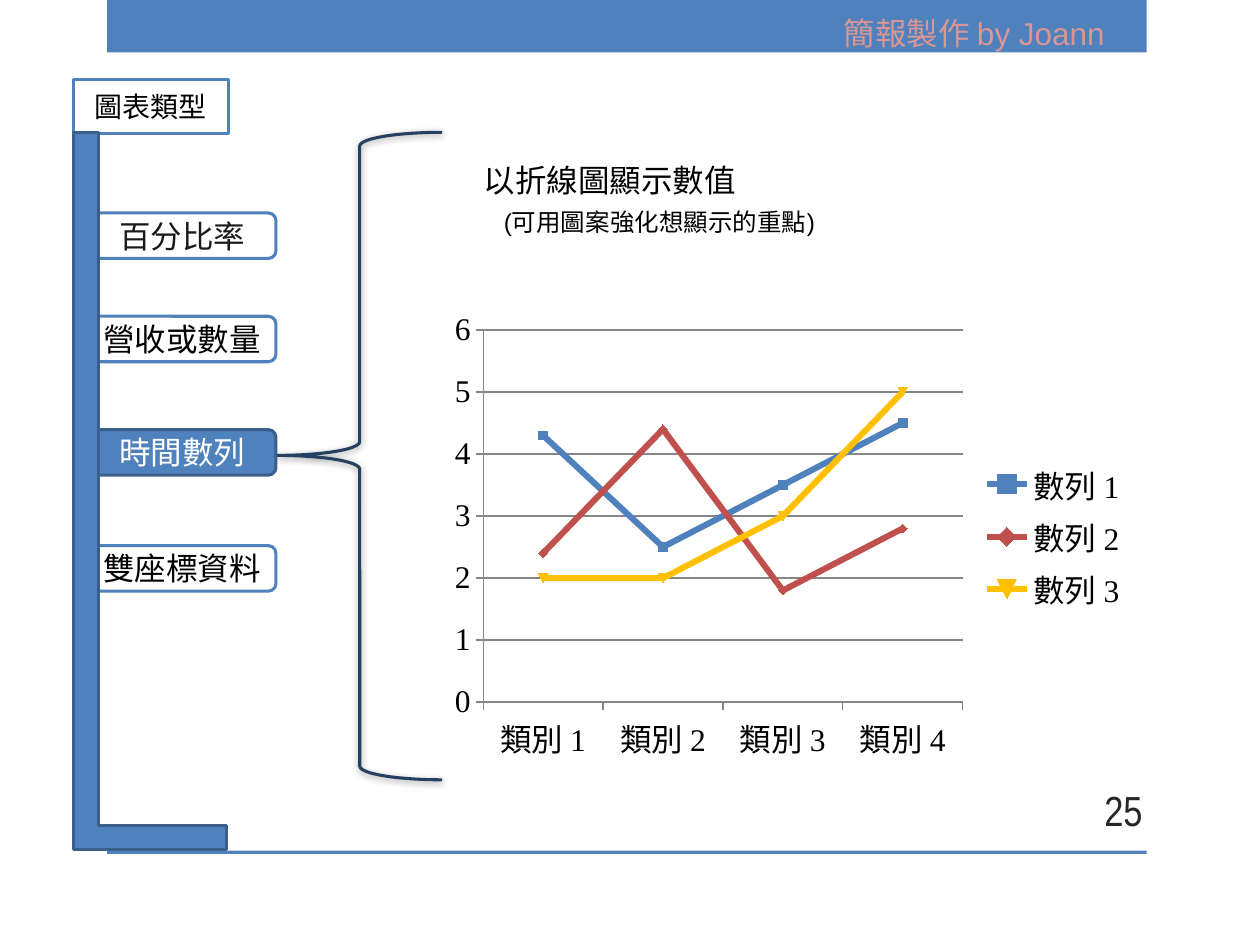
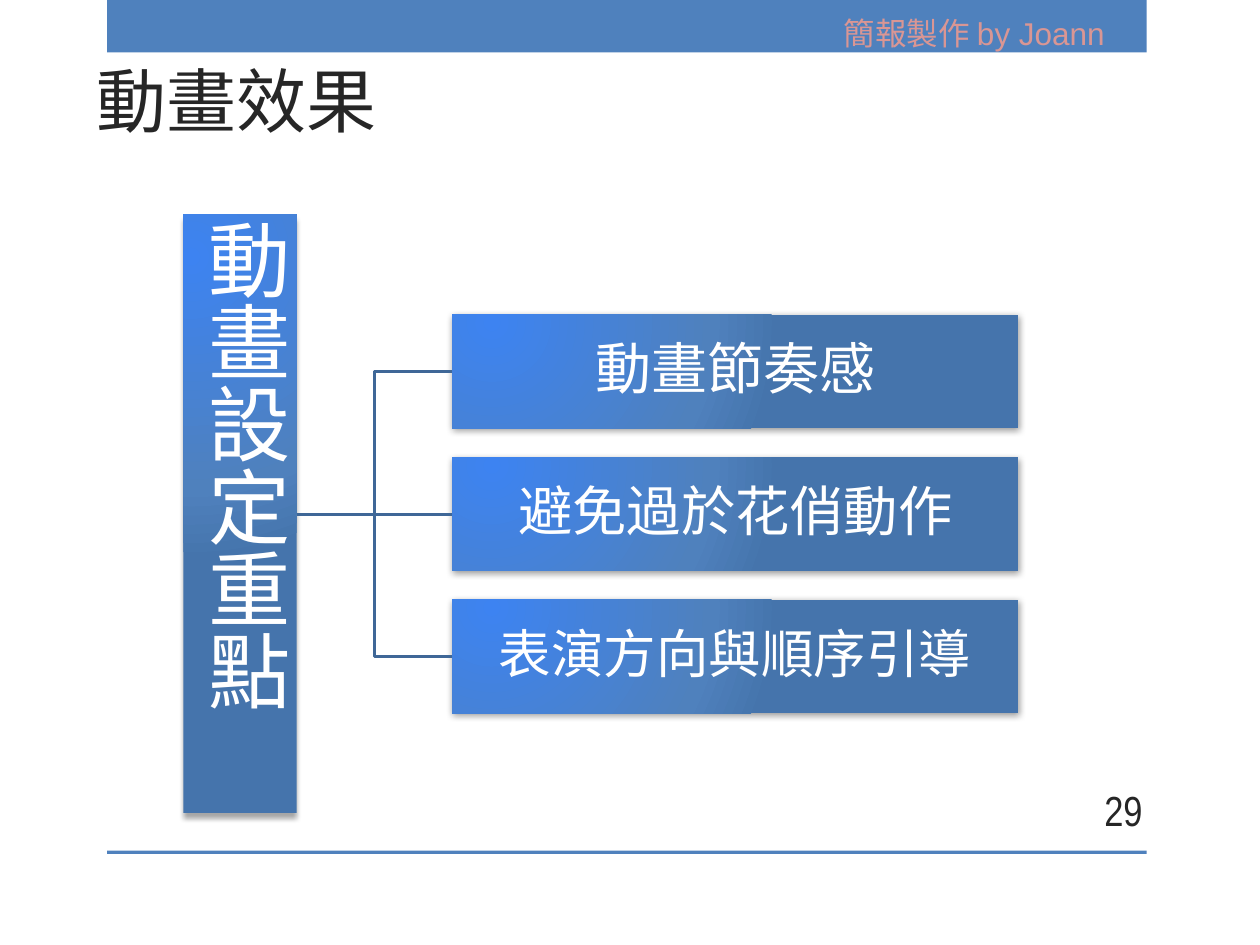
from lxml import etree
from pptx import Presentation
from pptx.chart.data import CategoryChartData
from pptx.dml.color import RGBColor
from pptx.enum.chart import XL_CHART_TYPE, XL_LEGEND_POSITION, XL_TICK_MARK
from pptx.enum.shapes import MSO_CONNECTOR, MSO_SHAPE
from pptx.enum.text import MSO_ANCHOR, MSO_AUTO_SIZE, PP_ALIGN
from pptx.oxml.ns import qn
from pptx.util import Pt

# Content
HEADER = "簡報製作 by Joann"

MENU_TITLE = "圖表類型"
CHART_TYPES = [  # label, top, text colour
    ("百分比率", 121.7, "ink"),
    ("營收或數量", 180.7, "black"),
    ("時間數列", 245.5, "white"),
    ("雙座標資料", 311.8, "black"),
]
SELECTED = "時間數列"
HEADLINE = "以折線圖顯示數值"
HINT = "(可用圖案強化想顯示的重點)"
CATEGORIES = ["類別 1", "類別 2", "類別 3", "類別 4"]
SERIES = [
    ("數列 1", (4.3, 2.5, 3.5, 4.5), "blue"),
    ("數列 2", (2.4, 4.4, 1.8, 2.8), "red"),
    ("數列 3", (2, 2, 3, 5), "yellow"),
]

ANIMATION_TITLE = "動畫效果"
ROOT = "動畫設定重點"
POINTS = [("動畫節奏感", 32), ("避免過於花俏動作", 31), ("表演方向與順序引導", 30)]

# Shared look
COLORS = {
    "blue": "4F81BD", "red": "C0504D", "yellow": "FFC000", "pink": "D99694",
    "white": "FFFFFF", "black": "000000", "ink": "1A1A1A", "title": "262626",
    "edge": "3A5F8C", "brace": "254061", "branch": "3F6797", "axis": "868686",
    "glow": "3D83F1", "deep": "4574AC",
}
SANS, NARROW, SERIF = "Arial", "Arial Narrow", "Times New Roman"
LINE = 1.75
SOFT_SHADOW = (40, 4, 1, 88)  # opacity %, blur, distance, angle
ROOT_SHADOW = (35, 3, 3, 90)


def rgb(key):
    return RGBColor.from_string(COLORS[key])


def points(*lengths):
    return [Pt(length) for length in lengths]


def place(part, box):
    part.left, part.top, part.width, part.height = points(*box)


def paint(part, fill=None, line=None):
    if fill:
        part.fill.solid()
        part.fill.fore_color.rgb = rgb(fill)
    else:
        part.fill.background()
    if line:
        part.line.color.rgb = rgb(line)
        part.line.width = Pt(LINE)
    else:
        part.line.fill.background()


def write(part, text, size, font, color, align=PP_ALIGN.LEFT,
          anchor=MSO_ANCHOR.TOP, margin=None, spacing=None):
    frame = part.text_frame
    frame.text = text
    frame.word_wrap = True
    frame.auto_size = MSO_AUTO_SIZE.NONE
    frame.vertical_anchor = anchor
    if margin is not None:
        frame.margin_left = frame.margin_right = Pt(margin)
        frame.margin_top = frame.margin_bottom = Pt(margin)
    paragraph = frame.paragraphs[0]
    paragraph.alignment = align
    if spacing:
        paragraph.line_spacing = spacing
    paragraph.font.size = Pt(size)
    paragraph.font.name = font
    paragraph.font.color.rgb = rgb(color)


def add_part(slide, kind, box, fill=None, line=None):
    part = slide.shapes.add_shape(kind, *points(*box))
    part.shadow.inherit = False
    paint(part, fill, line)
    return part


def add_label(slide, box, *text, **style):
    label = slide.shapes.add_textbox(*points(*box))
    write(label, *text, **style)
    return label


def cast_shadow(part, opacity, blur, distance, angle):
    effects = part.element.spPr.find(qn("a:effectLst"))
    shadow = etree.SubElement(
        effects, qn("a:outerShdw"), blurRad=str(Pt(blur)), dist=str(Pt(distance)),
        dir=str(angle * 60000), rotWithShape="0")
    color = etree.SubElement(shadow, qn("a:srgbClr"), val=COLORS["black"])
    etree.SubElement(color, qn("a:alpha"), val=str(opacity * 1000))


def glow_fill(part):
    """Replace the solid fill with a circular gradient from the top left."""
    gradient = etree.Element(qn("a:gradFill"), rotWithShape="1")
    stops = etree.SubElement(gradient, qn("a:gsLst"))
    for position, key in ((0, "glow"), (76, "blue"), (100, "deep")):
        stop = etree.SubElement(stops, qn("a:gs"), pos=str(position * 1000))
        etree.SubElement(stop, qn("a:srgbClr"), val=COLORS[key])
    circle = etree.SubElement(gradient, qn("a:path"))
    circle.set("path", "circle")
    etree.SubElement(circle, qn("a:fillToRect"), l="15000", t="15000", r="100000", b="100000")
    properties = part.element.spPr
    properties.replace(properties.find(qn("a:solidFill")), gradient)


def make_corner(part, foot, stem):
    """Turn a rectangle into the preset L shape, which MSO_SHAPE lacks."""
    geometry = part.element.spPr.find(qn("a:prstGeom"))
    geometry.set("prst", "corner")
    guides = geometry.find(qn("a:avLst"))
    for name, value in (("adj1", foot), ("adj2", stem)):
        etree.SubElement(guides, qn("a:gd"), name=name, fmla=f"val {value}")


def add_glow_box(slide, box, text, size, shadow, margin):
    part = add_part(slide, MSO_SHAPE.RECTANGLE, box, "blue")
    glow_fill(part)
    cast_shadow(part, *shadow)
    write(part, text, size, SERIF, "white", PP_ALIGN.CENTER, MSO_ANCHOR.MIDDLE,
          margin=margin, spacing=0.9)
    return part


def add_frame_to_master(prs, slide):
    """Build band, rule and header once and move them to the master."""
    frame = [
        add_part(slide, MSO_SHAPE.RECTANGLE, (61.2, 0, 594, 30), "blue"),
        add_part(slide, MSO_SHAPE.RECTANGLE, (61.2, 486, 594, 2), "blue"),
        add_label(slide, (475.2, 4.3, 180, 29), HEADER, 18, SANS, "pink"),
    ]
    tree = prs.slide_master.element.cSld.spTree
    for part in frame:
        tree.insert_element_before(part.element, "p:extLst")


def add_page_number(slide, number):
    add_label(slide, (600, 448, 60, 29), str(number), 24, NARROW, "title",
              align=PP_ALIGN.RIGHT, anchor=MSO_ANCHOR.MIDDLE)


def add_line_chart(slide):
    data = CategoryChartData()
    data.categories = CATEGORIES
    for name, values, _ in SERIES:
        data.add_series(name, values)
    chart = slide.shapes.add_chart(
        XL_CHART_TYPE.LINE_MARKERS, *points(252, 173.5, 399.6, 266.4), data).chart
    chart.has_title = False
    chart.font.size = Pt(18)
    chart.font.name = SERIF
    chart.font.color.rgb = rgb("black")
    chart.has_legend = True
    chart.legend.position = XL_LEGEND_POSITION.RIGHT
    chart.legend.include_in_layout = False

    chart.value_axis.has_major_gridlines = True
    for lines in (chart.category_axis, chart.value_axis, chart.value_axis.major_gridlines):
        lines.format.line.color.rgb = rgb("axis")
        lines.format.line.width = Pt(0.75)
    for axis in (chart.category_axis, chart.value_axis):
        axis.major_tick_mark = XL_TICK_MARK.OUTSIDE
        axis.minor_tick_mark = XL_TICK_MARK.NONE

    chart.plots[0].vary_by_categories = False
    for series, (_, _, color) in zip(chart.plots[0].series, SERIES):
        series.smooth = False
        series.format.line.color.rgb = rgb(color)
        series.format.line.width = Pt(3.5)
        series.marker.size = 5
        paint(series.marker.format, color)
        series.marker.format.line.color.rgb = rgb(color)


def build_chart_types(slide):
    add_page_number(slide, 25)

    # Brace from the selected type to its example
    brace = add_part(slide, MSO_SHAPE.LEFT_BRACE, (158.4, 75.6, 94.3, 370), line="brace")
    brace.adjustments[0], brace.adjustments[1] = 0.083, 0.499
    cast_shadow(brace, *SOFT_SHADOW)

    # Example
    add_label(slide, (269.3, 88.6, 226.8, 28.8), HEADLINE, 18, SANS, "black")
    add_label(slide, (280.8, 114.5, 213, 24.5), HINT, 14, SANS, "black")
    add_line_chart(slide)

    # Menu of chart types
    menu_title = slide.shapes.title
    place(menu_title, (41.8, 45.4, 88.6, 31))
    paint(menu_title, "white", "blue")
    centred = dict(align=PP_ALIGN.CENTER, anchor=MSO_ANCHOR.MIDDLE, margin=0)
    write(menu_title, MENU_TITLE, 16, SERIF, "black", **centred)
    for label, top, color in CHART_TYPES:
        colors = ("blue", "edge") if label == SELECTED else ("white", "blue")
        option = add_part(slide, MSO_SHAPE.ROUNDED_RECTANGLE, (50.4, top, 107.3, 26), *colors)
        write(option, label, 18, SERIF, color, **centred)
    spine = add_part(slide, MSO_SHAPE.RECTANGLE, (41.8, 75.6, 87.8, 409.7), "blue", "edge")
    make_corner(spine, 15500, 16500)


def build_animation(slide):
    add_page_number(slide, 29)
    place(slide.shapes.title, (48.2, 29.5, 676.8, 103.7))
    write(slide.shapes.title, ANIMATION_TITLE, 40, NARROW, "title")

    # Root with vertical text, then one card per point
    root = add_glow_box(slide, (104.8, 122.8, 64.8, 342), ROOT, 47, ROOT_SHADOW, 2.2)
    root.element.txBody.find(qn("a:bodyPr")).set("vert", "eaVert")
    card_height, card_pitch = 64.8, 81.4
    for row, (text, size) in enumerate(POINTS):
        card = add_glow_box(slide, (258.5, 180 + row * card_pitch, 323.3, card_height),
                            text, size, SOFT_SHADOW, 1.4)
        kind = MSO_CONNECTOR.STRAIGHT if row == 1 else MSO_CONNECTOR.ELBOW
        branch = slide.shapes.add_connector(kind, 0, 0, 0, 0)
        branch.begin_connect(root, 3)
        branch.end_connect(card, 1)
        branch.line.color.rgb = rgb("branch")
        branch.line.width = Pt(LINE)
        etree.SubElement(branch.element.spPr, qn("a:effectLst"))


def main():
    prs = Presentation()
    prs.slide_width, prs.slide_height = Pt(720), Pt(540)
    title_only = prs.slide_layouts[5]
    slides = [prs.slides.add_slide(title_only) for _ in range(2)]
    add_frame_to_master(prs, slides[0])
    build_chart_types(slides[0])
    build_animation(slides[1])
    prs.save("out.pptx")


if __name__ == "__main__":
    main()
